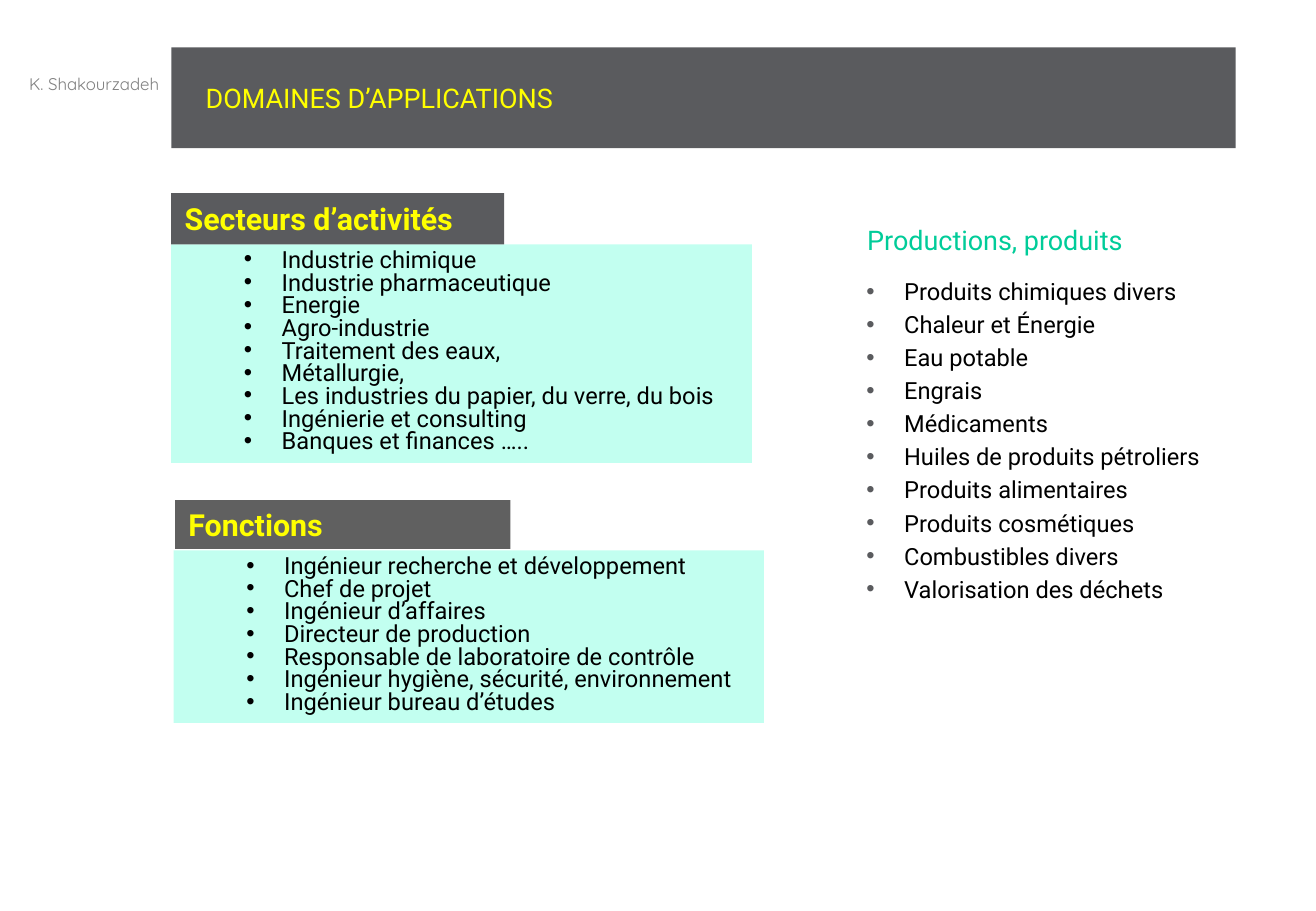
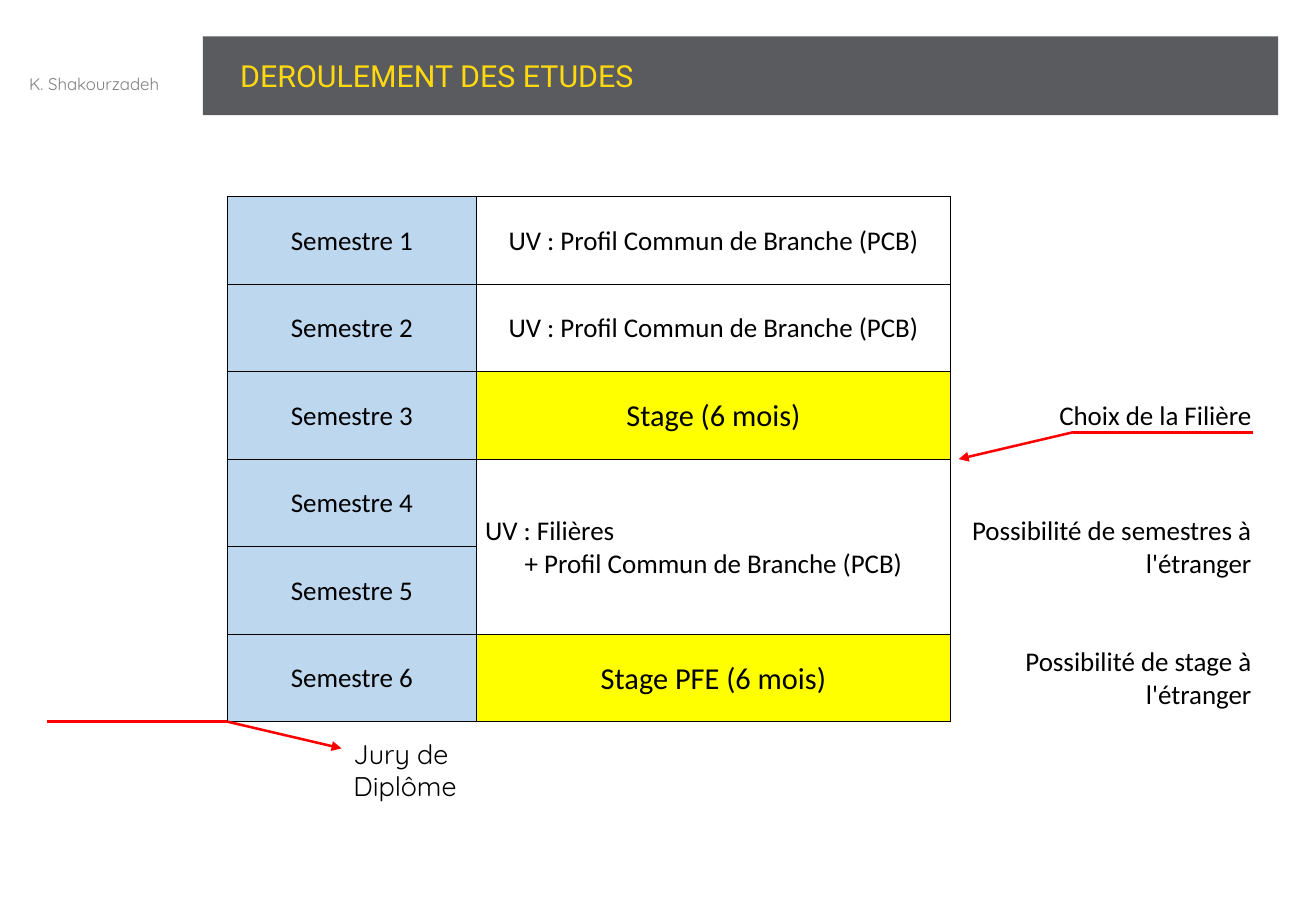
"""Build two slides on the fields of application and the course of studies."""
import pptx
import pptx.dml.color
import pptx.enum.shapes
import pptx.enum.text
import pptx.oxml
import pptx.oxml.ns
import pptx.util
from lxml import etree

Cm = pptx.util.Cm
Pt = pptx.util.Pt
ALIGN = pptx.enum.text.PP_ALIGN
ANCHOR = pptx.enum.text.MSO_ANCHOR
qn = pptx.oxml.ns.qn

COLOURS = {name: pptx.dml.color.RGBColor.from_string(value) for name, value in {
    "band": "5A5B5E", "dark": "606060", "mint": "C2FFF0", "yellow": "FFFF00",
    "gold": "FFD910", "green": "00CC99", "grey": "808080", "black": "000000",
    "blue": "BDD7EE", "red": "FF0000",
}.items()}


def write(frame, lines, size, colour, font="Roboto", bold=False, align=ALIGN.LEFT):
    """Fill a text frame with one paragraph per line and format it."""
    frame.text = "\n".join(lines)
    frame.word_wrap = True
    for para in frame.paragraphs:
        para.alignment = align
        for span in para.runs:
            span.font.size = Pt(size)
            span.font.name = font
            span.font.bold = bold
            span.font.color.rgb = COLOURS[colour]


def add_bullets(frame, colour):
    """Give every paragraph of a frame a hanging round bullet."""
    for para in frame.paragraphs:
        properties = para._p.get_or_add_pPr()
        properties.set("marL", str(Cm(2.06)))
        properties.set("indent", str(Cm(-0.79)))
        tint = etree.SubElement(properties, qn("a:buClr"))
        etree.SubElement(tint, qn("a:srgbClr"), val=str(COLOURS[colour]))
        etree.SubElement(properties, qn("a:buFont"), typeface="Arial")
        etree.SubElement(properties, qn("a:buChar"), char="•")
    frame.paragraphs[0].space_before = Pt(0)


deck = pptx.Presentation()
deck.slide_width = Cm(27.51)
deck.slide_height = Cm(19.05)

TITLES = [
    (1, "DOMAINES D’APPLICATIONS", (3.58, 0.99, 22.25, 2.11), 0.72, 16, "yellow"),
    (5, "DEROULEMENT DES ETUDES", (4.24, 0.76, 22.48, 1.65), 0.78, 18, "gold"),
]
for layout, text, place, margin, size, colour in TITLES:
    page = deck.slides.add_slide(deck.slide_layouts[layout])
    title = page.shapes.title
    title.left, title.top, title.width, title.height = map(Cm, place)
    title.fill.solid()
    title.fill.fore_color.rgb = COLOURS["band"]
    frame = title.text_frame
    frame.auto_size = pptx.enum.text.MSO_AUTO_SIZE.NONE
    frame.vertical_anchor = ANCHOR.MIDDLE
    frame.margin_left = Cm(margin)
    frame.margin_top = frame.margin_bottom = 0
    write(frame, [text], size, colour)
fields, studies = deck.slides

author = fields.shapes.add_textbox(Cm(0.36), Cm(1.42), Cm(3.5), Cm(0.69))
write(author.text_frame, ["K. Shakourzadeh"], 10, "grey", "Quicksand")
author.element.nvSpPr.cNvPr.set("id", "20")
deck.slide_master.shapes.element.append(author.element)

products = fields.placeholders[1]
products.left, products.top, products.width, products.height = map(Cm, (16.54, 5.66, 10.62, 10.31))
products.text_frame.auto_size = pptx.enum.text.MSO_AUTO_SIZE.NONE
products.text_frame.margin_left = products.text_frame.margin_right = Cm(0.3)
write(products.text_frame, [
    "Produits chimiques divers", "Chaleur et Énergie", "Eau potable", "Engrais",
    "Médicaments", "Huiles de produits pétroliers", "Produits alimentaires",
    "Produits cosmétiques", "Combustibles divers", "Valorisation des déchets",
], 14, "black")
add_bullets(products.text_frame, "band")

heading = fields.shapes.add_textbox(Cm(17.88), Cm(4.55), Cm(8.41), Cm(0.94))
write(heading.text_frame, ["Productions, produits"], 16, "green")

SECTORS = [
    "Industrie chimique", "Industrie pharmaceutique", "Energie", "Agro-industrie",
    "Traitement des eaux,", "Métallurgie,", "Les industries du papier, du verre, du bois",
    "Ingénierie et consulting", "Banques et finances …..",
]
JOBS = [
    "Ingénieur recherche et développement", "Chef de projet", "Ingénieur d’affaires",
    "Directeur de production", "Responsable de laboratoire de contrôle",
    "Ingénieur hygiène, sécurité, environnement", "Ingénieur bureau d’études",
]
PANELS = [
    (SECTORS, "mint", (3.58, 5.11, 12.14, 4.57)),
    (["Secteurs d’activités"], "band", (3.58, 4.04, 6.96, 1.07)),
    (JOBS, "mint", (3.63, 11.51, 12.34, 3.61)),
    (["Fonctions"], "dark", (3.66, 10.46, 7.01, 1.02)),
]
for lines, fill, place in PANELS:
    panel = fields.shapes.add_shape(pptx.enum.shapes.MSO_SHAPE.RECTANGLE, *map(Cm, place))
    panel.shadow.inherit = False
    panel.fill.solid()
    panel.fill.fore_color.rgb = COLOURS[fill]
    panel.line.fill.background()
    frame = panel.text_frame
    if fill == "mint":
        frame.vertical_anchor = ANCHOR.TOP
        write(frame, lines, 14, "black")
        add_bullets(frame, "black")
        for para in frame.paragraphs:
            para.line_spacing = 0.8
    else:
        frame.vertical_anchor = ANCHOR.MIDDLE
        frame.margin_left = Cm(0.28)
        frame.margin_top = frame.margin_bottom = 0
        write(frame, lines, 18, "yellow", bold=True)

COMMON = ["UV : Profil Commun de Branche (PCB)"]
COURSES = {
    0: COMMON, 1: COMMON, 2: ["Stage (6 mois)"],
    3: ["UV : Filières", "+ Profil Commun de Branche (PCB)"], 5: ["Stage PFE (6 mois)"],
}
REMARKS = {
    2: ["Choix de la Filière"], 3: ["Possibilité de semestres à l'étranger"],
    5: ["Possibilité de stage à l'étranger"],
}
INTERNSHIPS = (2, 5)
WIDTHS = (5.21, 9.91, 6.32)
ROWS = 6
ROW_HEIGHT = 1.83

table = studies.shapes.add_table(
    ROWS, len(WIDTHS), Cm(4.75), Cm(4.11), Cm(sum(WIDTHS)), Cm(ROWS * ROW_HEIGHT)).table
table._tbl.tblPr[0].text = "{2D5ABB26-0587-4C30-8999-92F81FD0307C}"
table.first_row = table.horz_banding = False
for column, width in zip(table.columns, WIDTHS):
    column.width = Cm(width)
for row in table.rows:
    row.height = Cm(ROW_HEIGHT)
for column in (1, 2):
    table.cell(3, column).merge(table.cell(4, column))

for row in range(ROWS):
    contents = [[f"Semestre {row + 1}"], COURSES.get(row), REMARKS.get(row)]
    for column, lines in enumerate(contents):
        cell = table.cell(row, column)
        for side in ("lnL",) if column == 2 else ("lnL", "lnR", "lnT", "lnB"):
            border = etree.SubElement(cell._tc.get_or_add_tcPr(), qn("a:" + side), w=str(Pt(0.5)))
            paint = etree.SubElement(border, qn("a:solidFill"))
            etree.SubElement(paint, qn("a:srgbClr"), val=str(COLOURS["black"]))
        internship = column == 1 and row in INTERNSHIPS
        if column == 0 or internship:
            cell.fill.solid()
            cell.fill.fore_color.rgb = COLOURS["yellow" if internship else "blue"]
        else:
            cell.fill.background()
        cell.vertical_anchor = ANCHOR.MIDDLE
        cell.margin_left = cell.margin_right = cell.margin_top = Cm(0.03)
        cell.margin_bottom = 0
        if lines:
            write(cell.text_frame, lines, 18 if internship else 16, "black", "Calibri",
                  align=ALIGN.RIGHT if column == 2 else ALIGN.CENTER)

branch = table.cell(3, 1).text_frame.paragraphs[0]
branch.alignment = ALIGN.LEFT
branch._p.get_or_add_pPr().set("marL", str(Cm(0.15)))

LINES = [
    ((22.43, 9.04), (20.04, 9.6), True),
    ((22.43, 9.04), (26.19, 9.04), False),
    ((4.75, 15.09), (7.14, 15.65), True),
    ((0.99, 15.09), (4.75, 15.09), False),
]
for start, end, arrow in LINES:
    line = studies.shapes.add_connector(
        pptx.enum.shapes.MSO_CONNECTOR.STRAIGHT, *map(Cm, start + end))
    line.line.color.rgb = COLOURS["red"]
    line.line.width = Pt(1.5)
    if arrow:
        etree.SubElement(line.line._get_or_add_ln(), qn("a:tailEnd"), type="triangle")
    etree.SubElement(line.element.spPr, qn("a:effectLst"))

jury = studies.shapes.add_textbox(Cm(7.14), Cm(15.29), Cm(3.8), Cm(1.7))
write(jury.text_frame, ["Jury de Diplôme"], 16, "black", "Quicksand")

deck.save("out.pptx")
